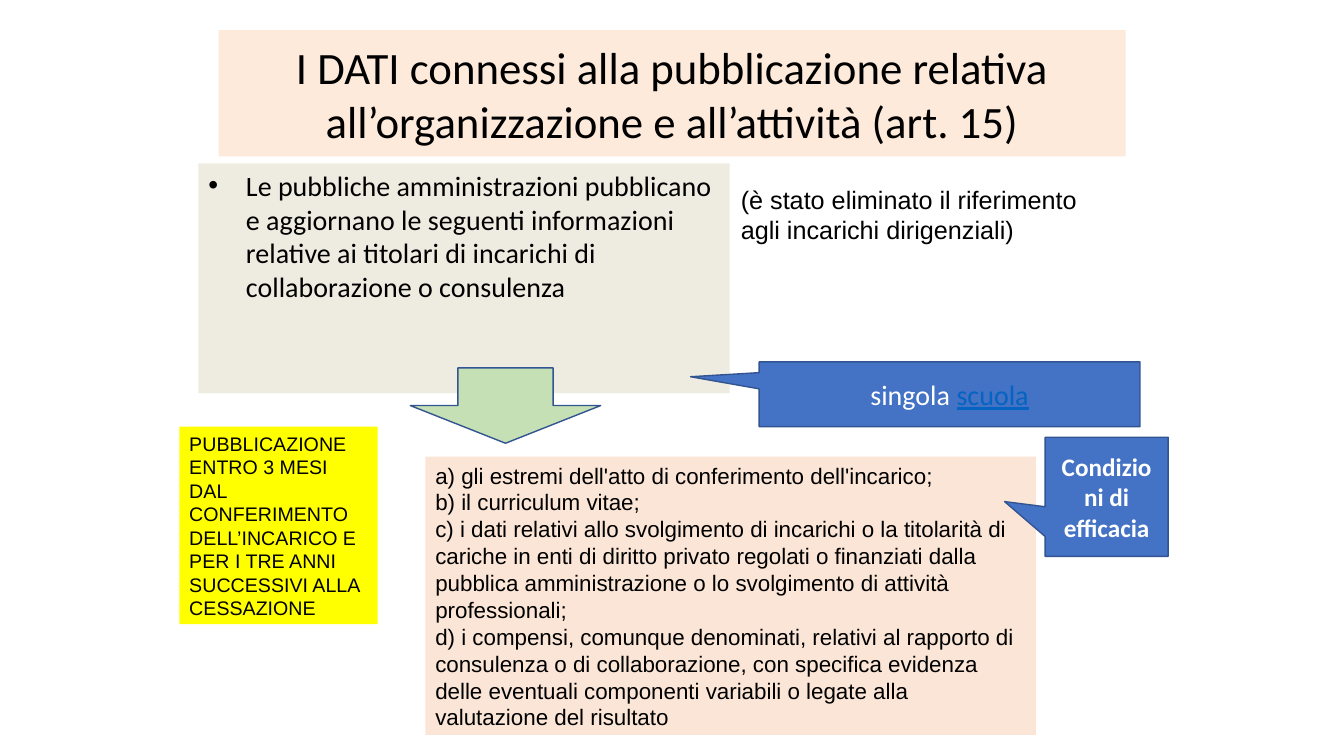
from dataclasses import dataclass

from lxml import etree
from pptx import Presentation
from pptx.dml.color import RGBColor
from pptx.enum import shapes, text
from pptx.oxml import ns
from pptx.util import Cm, Pt


@dataclass(frozen=True)
class Theme:
    black: str = "000000"
    white: str = "FFFFFF"
    peach: str = "FDEADA"
    sand: str = "EEECE1"
    salmon: str = "FBE5D6"
    yellow: str = "FFFF00"
    green: str = "C5E0B4"
    blue: str = "4472C4"
    outline: str = "325491"
    link: str = "0563C1"
    heading: str = "Calibri"
    body: str = "Arial"
    title_size: int = 32
    lead_size: int = 20
    note_size: int = 18
    list_size: int = 16
    small_size: int = 14


THEME = Theme()
KIND = shapes.MSO_SHAPE


def set_format(target, values):
    for name, value in values.items():
        setattr(target, name, value)


def write_run(paragraph, words, font, size, color, **extra):
    run = paragraph.add_run()
    run.text = words
    run.font.color.rgb = RGBColor.from_string(color)
    set_format(run.font, {"name": font, "size": Pt(size), **extra})


def write_text(shape, lines, font, size, color=THEME.black, centered=False, **extra):
    """Write one paragraph per line, either centred or from the top left."""
    frame = shape.text_frame
    anchor = text.MSO_ANCHOR.MIDDLE if centered else text.MSO_ANCHOR.TOP
    alignment = text.PP_ALIGN.CENTER if centered else text.PP_ALIGN.LEFT
    set_format(frame, {"word_wrap": True, "vertical_anchor": anchor})
    for index, line in enumerate(lines):
        paragraph = frame.add_paragraph() if index else frame.paragraphs[0]
        paragraph.alignment = alignment
        write_run(paragraph, line, font, size, color, **extra)


def add_bullet(paragraph):
    properties = paragraph._p.get_or_add_pPr()
    properties.set("marL", str(Cm(0.95)))
    properties.set("indent", str(Cm(-0.95)))
    font = etree.SubElement(properties, ns.qn("a:buFont"))
    font.set("typeface", THEME.body)
    etree.SubElement(properties, ns.qn("a:buChar")).set("char", "•")


def add_block(slide, kind, box, fill, outlined=False, adjustments=()):
    shape = slide.shapes.add_shape(kind, *map(Cm, box))
    shape.shadow.inherit = False
    shape.fill.solid()
    shape.fill.fore_color.rgb = RGBColor.from_string(fill)
    if outlined:
        shape.line.color.rgb = RGBColor.from_string(THEME.outline)
        shape.line.width = Pt(1)
    else:
        shape.line.fill.background()
    for index, value in enumerate(adjustments):
        shape.adjustments[index] = value
    return shape


def add_panel(slide, box, fill, lines, font, size, centered=False):
    panel = add_block(slide, KIND.RECTANGLE, box, fill)
    write_text(panel, lines, font, size, centered=centered)
    return panel


def add_callout(slide, box, tip, words, size, **extra):
    callout = add_block(slide, KIND.RECTANGULAR_CALLOUT, box, THEME.blue, True, tip)
    write_text(callout, [words], THEME.heading, size, THEME.white, True, **extra)
    return callout


def add_note(slide, box, words):
    note = slide.shapes.add_textbox(*map(Cm, box))
    write_text(note, [words], THEME.body, THEME.note_size)


def main():
    presentation = Presentation()
    set_format(presentation, {"slide_width": Cm(33.87), "slide_height": Cm(19.05)})
    slide = presentation.slides.add_slide(presentation.slide_layouts[6])

    # Obligation and the body it applies to
    obligation = add_panel(
        slide, (5, 4.12, 13.39, 5.79), THEME.sand,
        ["Le pubbliche amministrazioni pubblicano e aggiornano le seguenti informazioni "
         "relative ai titolari di incarichi di collaborazione o consulenza"],
        THEME.heading, THEME.lead_size)
    add_bullet(obligation.text_frame.paragraphs[0])
    school = add_callout(slide, (19.13, 9.12, 9.6, 1.63), (-0.68, -0.27),
                         "singola ", THEME.lead_size)
    write_run(school.text_frame.paragraphs[0], "scuola", THEME.heading,
              THEME.lead_size, THEME.link, underline=True)

    # Data to publish
    add_panel(
        slide, (10.72, 11.51, 15.39, 7.01), THEME.salmon,
        ["a) gli estremi dell'atto di conferimento dell'incarico;",
         "b) il curriculum vitae;",
         "c) i dati relativi allo svolgimento di incarichi o la titolarità di cariche in enti "
         "di diritto privato regolati o finanziati dalla pubblica amministrazione o lo "
         "svolgimento di attività professionali;",
         "d) i compensi, comunque denominati, relativi al rapporto di consulenza o di "
         "collaborazione, con specifica evidenza delle eventuali componenti variabili o "
         "legate alla valutazione del risultato"],
        THEME.body, THEME.list_size)
    add_block(slide, KIND.DOWN_ARROW, (10.34, 9.27, 4.8, 1.9), THEME.green, True, (0.5, 0.5))

    # Title
    add_panel(
        slide, (5.51, 0.76, 22.86, 3.18), THEME.peach,
        ["I DATI connessi alla pubblicazione relativa all’organizzazione e all’attività (art. 15)"],
        THEME.heading, THEME.title_size, centered=True)

    # Deadline, condition and remark
    add_panel(
        slide, (4.52, 10.75, 5, 4.98), THEME.yellow,
        ["PUBBLICAZIONE ENTRO 3 MESI DAL CONFERIMENTO DELL’INCARICO E PER I TRE ANNI "
         "SUCCESSIVI ALLA CESSAZIONE"],
        THEME.body, THEME.small_size)
    add_callout(slide, (26.34, 11.02, 3.1, 3), (-0.83, 0.04),
                "Condizioni di efficacia", THEME.note_size, bold=True)
    add_note(slide, (18.42, 4.52, 9.91, 1.78),
             "(è stato eliminato il riferimento agli incarichi dirigenziali)")

    presentation.save("out.pptx")


if __name__ == "__main__":
    main()
